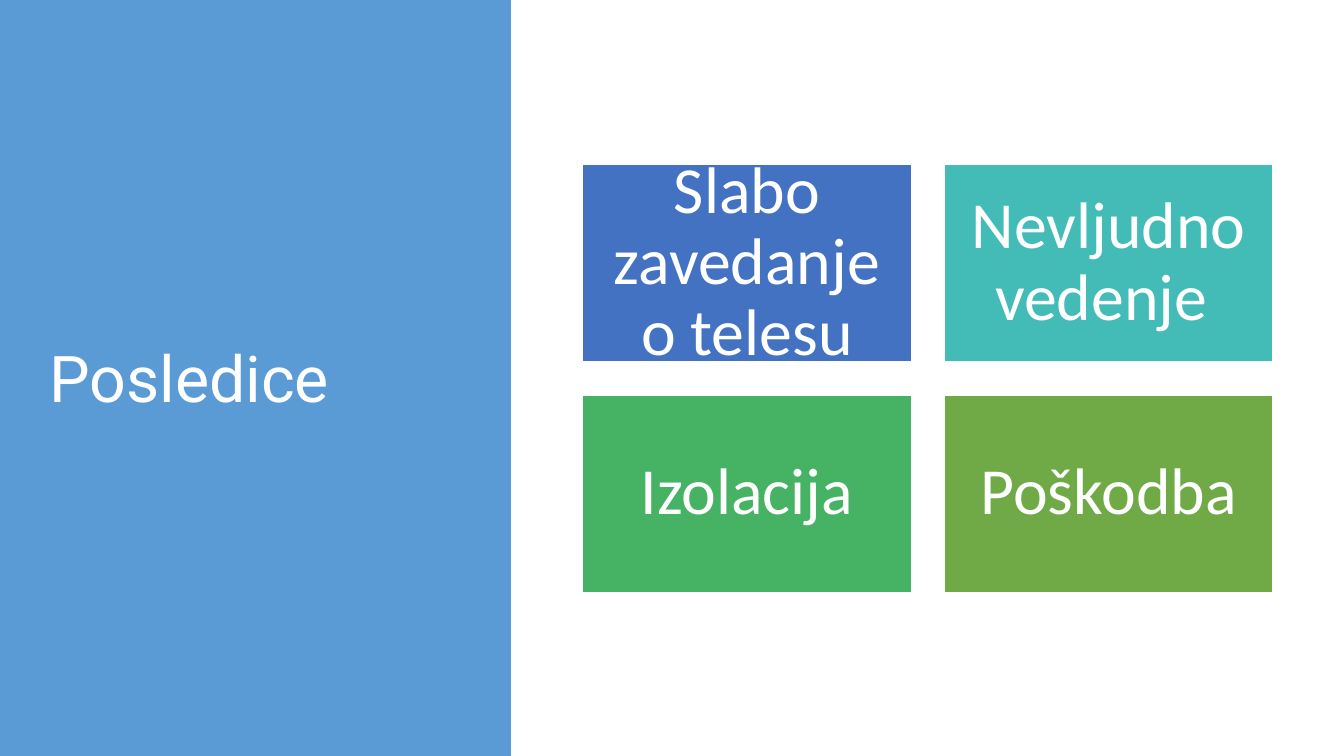
from pptx import Presentation
from pptx import util as u
from pptx.dml import color
from pptx.enum import shapes, text

WHITE = "FFFFFF"
CONSEQUENCES = [
    ("Slabo zavedanje o telesu", "4372C3"),
    ("Nevljudno vedenje ", "43BCB8"),
    ("Izolacija", "45B363"),
    ("Poškodba", "6FAA47"),
]
GRID_LEFT, GRID_TOP = 416.2, 117.5
CARD_WIDTH, CARD_HEIGHT = 234.8, 141
GAP = 23.6
CARD_INSET = 14.4


def set_color(color_format, hex_color):
    """Apply a hex colour to a fill or font colour."""
    color_format.rgb = color.RGBColor.from_string(hex_color)


def add_rectangle(slide, left, top, width, height, hex_color):
    """Add a flat, borderless rectangle."""
    shape = slide.shapes.add_shape(
        shapes.MSO_SHAPE.RECTANGLE, u.Pt(left), u.Pt(top), u.Pt(width), u.Pt(height))
    shape.shadow.inherit = False
    shape.fill.solid()
    set_color(shape.fill.fore_color, hex_color)
    shape.line.fill.background()
    return shape


def write(shape, words, font_name, size, alignment):
    """Write white, vertically centred text into a shape."""
    frame = shape.text_frame
    frame.text = words
    frame.word_wrap = True
    frame.auto_size = text.MSO_AUTO_SIZE.NONE
    frame.vertical_anchor = text.MSO_ANCHOR.MIDDLE
    paragraph = frame.paragraphs[0]
    paragraph.alignment = alignment
    paragraph.line_spacing = 0.9
    font = paragraph.runs[0].font
    font.name = font_name
    font.size = u.Pt(size)
    set_color(font.color, WHITE)


def add_title_panel(slide):
    """Place the title over a coloured side panel."""
    title = slide.shapes.title
    title.left, title.top = u.Pt(28), u.Pt(56.2)
    title.width, title.height = u.Pt(311), u.Pt(433.4)
    write(title, "Posledice", "Roboto", 46, text.PP_ALIGN.LEFT)
    panel = add_rectangle(slide, 0, 0, 365, 540, "5B9BD5")
    title.element.addprevious(panel.element)


def add_card(slide, index, words, hex_color):
    """Add one card of the two-column grid."""
    row, column = divmod(index, 2)
    left = GRID_LEFT + column * (CARD_WIDTH + GAP)
    top = GRID_TOP + row * (CARD_HEIGHT + GAP)
    card = add_rectangle(slide, left, top, CARD_WIDTH, CARD_HEIGHT, hex_color)
    set_color(card.line.color, WHITE)
    card.line.width = u.Pt(1)
    frame = card.text_frame
    frame.margin_left = frame.margin_right = u.Pt(CARD_INSET)
    frame.margin_top = frame.margin_bottom = u.Pt(CARD_INSET)
    write(card, words, "Calibri", 47, text.PP_ALIGN.CENTER)


def main():
    """Build and save the slide."""
    presentation = Presentation()
    presentation.slide_width, presentation.slide_height = u.Pt(960), u.Pt(540)
    slide = presentation.slides.add_slide(presentation.slide_layouts[5])
    add_title_panel(slide)
    for index, (words, hex_color) in enumerate(CONSEQUENCES):
        add_card(slide, index, words, hex_color)
    presentation.save("out.pptx")


if __name__ == "__main__":
    main()
